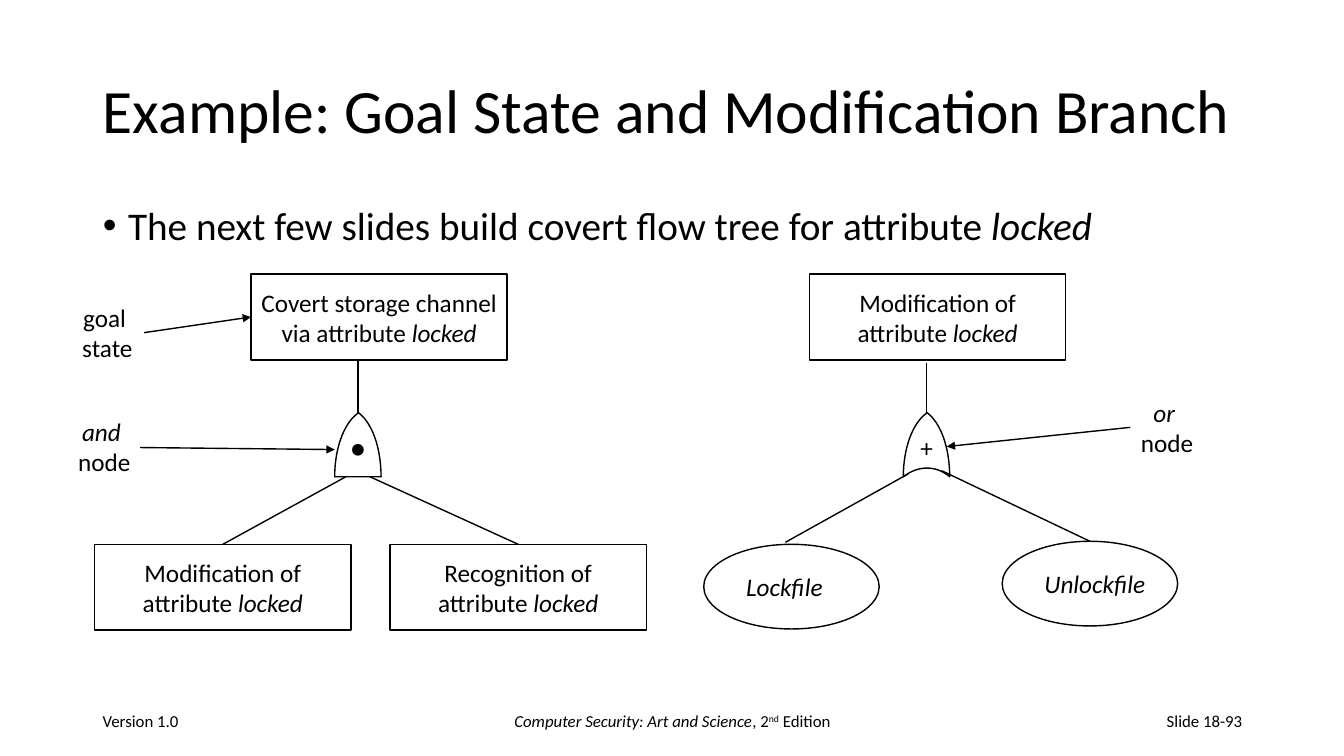
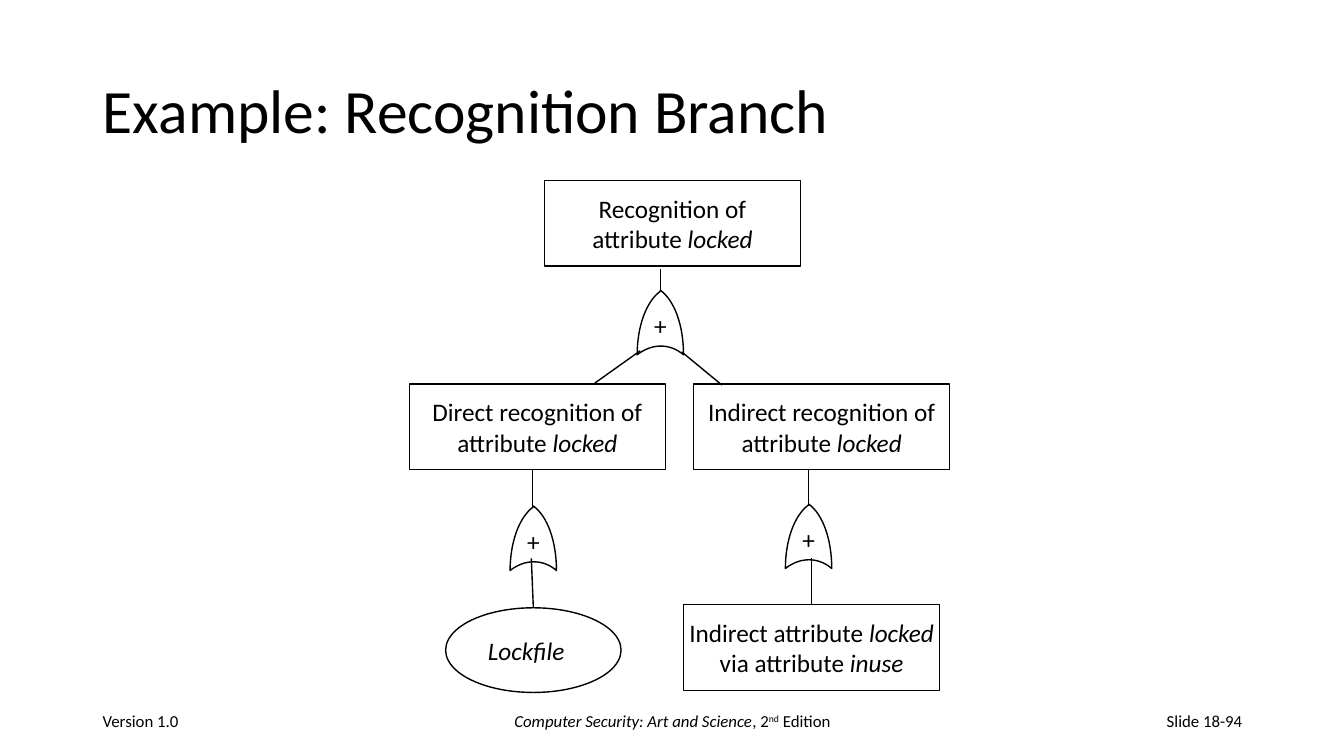
from lxml import etree
from pptx import Presentation
from pptx.dml.color import RGBColor
from pptx.enum.shapes import MSO_CONNECTOR, MSO_SHAPE
from pptx.enum.text import MSO_ANCHOR, PP_ALIGN
from pptx.oxml.ns import qn
from pptx.util import Inches, Pt

FONT = "Calibri"
INK = "000000"
BOX_SIZE = (2.54, 0.85)
OVAL_SIZE = (1.74, 0.84)
FOOTER_TOP, FOOTER_HEIGHT = 6.95, 0.4
LOCKED = "attribute *locked*"

# Gate outline in inches from its tip: cubic curves as four points each
LEFT_SIDE = ((-0.23, 0.64), (-0.23, 0.36), (-0.14, 0.11), (0, 0.01))
RIGHT_SIDE = ((0, 0), (0.14, 0.1), (0.23, 0.35), (0.23, 0.64))
HOLLOW_BASE = ((0.23, 0.64), (0.09, 0.52), (-0.09, 0.53), (-0.23, 0.64))
CURVE_STEPS = 16


def rgb(hex_color):
    return RGBColor.from_string(hex_color)


def place(shape, left, top, width, height):
    shape.left, shape.top = Inches(left), Inches(top)
    shape.width, shape.height = Inches(width), Inches(height)


def write(frame, lines, size, align=PP_ALIGN.LEFT, spacing=None):
    """Fill a text frame; *stars* mark italics and ^carets^ superscript."""
    for number, text in enumerate(lines):
        paragraph = frame.add_paragraph() if number else frame.paragraphs[0]
        paragraph.alignment = align
        paragraph.space_before = Pt(0)
        if spacing:
            paragraph.line_spacing = spacing
        paragraph.font.name = FONT
        paragraph.font.size = Pt(size)
        paragraph.font.color.rgb = rgb(INK)
        for i, styled in enumerate(text.split("*")):
            for j, part in enumerate(styled.split("^")):
                if not part:
                    continue
                run = paragraph.add_run()
                run.text = part
                if i % 2:
                    run.font.italic = True
                if j % 2:
                    run.font._element.set("baseline", "30000")


def add_title(slide, text):
    title = slide.shapes.title
    place(title, 0.92, 0.4, 11.5, 1.45)
    title.text_frame.vertical_anchor = MSO_ANCHOR.MIDDLE
    write(title.text_frame, [text], 44, spacing=0.9)


def add_bullets(slide, lines):
    body = slide.placeholders[1]
    place(body, 0.92, 2, 11.5, 1.02)
    for paragraph in body.text_frame.paragraphs:
        properties = paragraph._p.get_or_add_pPr()
        properties.set("marL", str(Inches(0.25)))
        properties.set("indent", str(-Inches(0.25)))
    write(body.text_frame, lines, 28, spacing=0.9)


def add_footer(slide, number):
    parts = (
        (0.92, 3, "Version 1.0", PP_ALIGN.LEFT),
        (4.42, 4.5, "*Computer Security: Art and Science*, 2^nd^ Edition",
         PP_ALIGN.CENTER),
        (9.42, 3, f"Slide 18-{number}", PP_ALIGN.RIGHT),
    )
    for left, width, text, align in parts:
        box = slide.shapes.add_textbox(Inches(left), Inches(FOOTER_TOP),
                                       Inches(width), Inches(FOOTER_HEIGHT))
        box.text_frame.word_wrap = True
        box.text_frame.vertical_anchor = MSO_ANCHOR.MIDDLE
        write(box.text_frame, [text], 12, align)


def style_outline(shape, lines):
    """Thin black outline, no fill, centred text without insets."""
    shape.shadow.inherit = False
    shape.fill.background()
    shape.line.color.rgb = rgb(INK)
    shape.line.width = Pt(1)
    frame = shape.text_frame
    frame.margin_left = frame.margin_right = 0
    frame.margin_top = frame.margin_bottom = 0
    frame.vertical_anchor = MSO_ANCHOR.MIDDLE
    write(frame, lines, 18, PP_ALIGN.CENTER)


def add_node(slide, preset, left, top, size, lines):
    node = slide.shapes.add_shape(preset, Inches(left), Inches(top),
                                  Inches(size[0]), Inches(size[1]))
    style_outline(node, lines)
    return node


def add_box(slide, left, top, *lines):
    return add_node(slide, MSO_SHAPE.RECTANGLE, left, top, BOX_SIZE, lines)


def add_operation(slide, left, top, name, shift):
    """Oval whose italic name sits shift inches right of its centre."""
    oval = add_node(slide, MSO_SHAPE.OVAL, left, top, OVAL_SIZE, [f"*{name}*"])
    oval.text_frame.margin_left = Inches(max(2 * shift, 0))
    oval.text_frame.margin_right = Inches(max(-2 * shift, 0))
    return oval


def curve_points(curve):
    """Points along a cubic Bezier curve."""
    for step in range(CURVE_STEPS + 1):
        t = step / CURVE_STEPS
        weights = ((1 - t) ** 3, 3 * t * (1 - t) ** 2,
                   3 * t ** 2 * (1 - t), t ** 3)
        yield tuple(sum(w * point[axis] for w, point in zip(weights, curve))
                    for axis in (0, 1))


def add_gate(slide, tip_x, tip_y, symbol, curves):
    outline = [(Inches(tip_x + x), Inches(tip_y + y))
               for curve in curves for x, y in curve_points(curve)]
    builder = slide.shapes.build_freeform(*outline[0])
    builder.add_line_segments(outline[1:], close=True)
    gate = builder.convert_to_shape()
    style_outline(gate, [symbol])
    gate.text_frame.margin_top = Inches(0.06)


def add_and_gate(slide, tip_x, tip_y):
    add_gate(slide, tip_x, tip_y, "●", (LEFT_SIDE, RIGHT_SIDE))


def add_or_gate(slide, tip_x, tip_y):
    add_gate(slide, tip_x, tip_y, "+", (LEFT_SIDE, RIGHT_SIDE, HOLLOW_BASE))


def add_line(slide, start, end, arrow=False):
    line = slide.shapes.add_connector(
        MSO_CONNECTOR.STRAIGHT, *(Inches(value) for value in start + end))
    line.line.color.rgb = rgb(INK)
    line.line.width = Pt(1)
    properties = line._element.spPr
    if arrow:
        etree.SubElement(properties.find(qn("a:ln")), qn("a:tailEnd"),
                         type="triangle")
    etree.SubElement(properties, qn("a:effectLst"))
    return line


def add_label(slide, left, top, *lines):
    label = slide.shapes.add_textbox(Inches(left), Inches(top),
                                     Inches(0.73), Inches(0.71))
    label.text_frame.word_wrap = False
    write(label.text_frame, lines, 18, PP_ALIGN.CENTER)


def start_slide(prs, layout, title, number):
    slide = prs.slides.add_slide(prs.slide_layouts.get_by_name(layout))
    add_title(slide, title)
    add_footer(slide, number)
    return slide


def build_goal_slide(prs):
    slide = start_slide(prs, "Title and Content",
                        "Example: Goal State and Modification Branch", 93)
    add_bullets(slide, ["The next few slides build covert flow tree for "
                        "attribute *locked*"])

    goal = add_box(slide, 2.49, 2.72, "Covert storage channel", f"via {LOCKED}")
    modification = add_box(slide, 0.94, 5.4, "Modification of", LOCKED)
    recognition = add_box(slide, 3.87, 5.4, "Recognition of", LOCKED)
    add_and_gate(slide, 3.55, 4.09)
    add_line(slide, (3.55, 3.57), (3.55, 4.09))
    add_line(slide, (3.43, 4.73), (2.21, 5.4)).end_connect(modification, 0)
    add_line(slide, (3.67, 4.73), (5.14, 5.4)).end_connect(recognition, 0)

    add_box(slide, 8.03, 2.72, "Modification of", LOCKED)
    add_operation(slide, 6.98, 5.4, "Lockfile", -0.07)
    unlock = add_operation(slide, 9.94, 5.37, "Unlockfile", 0.05)
    add_or_gate(slide, 9.19, 4.09)
    add_line(slide, (9.19, 3.6), (9.19, 4.09))
    add_line(slide, (9.01, 4.7), (7.79, 5.38))
    add_line(slide, (9.34, 4.67), (10.81, 5.37)).end_connect(unlock, 0)

    add_label(slide, 0.7, 2.95, "goal ", "state")
    add_line(slide, (1.43, 3.3), (2.49, 3.14), arrow=True).end_connect(goal, 1)
    add_label(slide, 0.67, 4.08, "*and *", "node")
    add_line(slide, (1.39, 4.44), (3.32, 4.46), arrow=True)
    add_label(slide, 11.21, 3.89, "*or *", "node")
    add_line(slide, (11.21, 4.24), (9.39, 4.43), arrow=True)


def build_recognition_slide(prs):
    slide = start_slide(prs, "Title Only", "Example: Recognition Branch", 94)

    add_box(slide, 5.4, 1.79, "Recognition of", LOCKED)
    add_or_gate(slide, 6.55, 2.88)
    add_line(slide, (6.55, 2.67), (6.55, 2.88))
    add_line(slide, (6.35, 3.48), (5.9, 3.8))
    add_line(slide, (6.76, 3.49), (7.16, 3.82))

    add_box(slide, 4.06, 3.81, "Direct recognition of", LOCKED)
    lock = add_operation(slide, 4.42, 6.03, "Lockfile", -0.07)
    add_or_gate(slide, 5.29, 5.02)
    add_line(slide, (5.28, 4.66), (5.28, 5.03))
    add_line(slide, (5.27, 5.54), (5.29, 6.03)).end_connect(lock, 0)

    add_box(slide, 6.88, 3.81, "Indirect recognition of", LOCKED)
    indirect = add_box(slide, 6.78, 6, f"Indirect {LOCKED}",
                       "via attribute *inuse*")
    add_or_gate(slide, 8.02, 5)
    add_line(slide, (8.02, 4.66), (8.02, 5.02))
    add_line(slide, (8.05, 5.54), (8.05, 6)).end_connect(indirect, 0)


def main():
    prs = Presentation()
    prs.slide_width, prs.slide_height = Inches(13.33), Inches(7.5)
    build_goal_slide(prs)
    build_recognition_slide(prs)
    prs.save("out.pptx")


if __name__ == "__main__":
    main()
